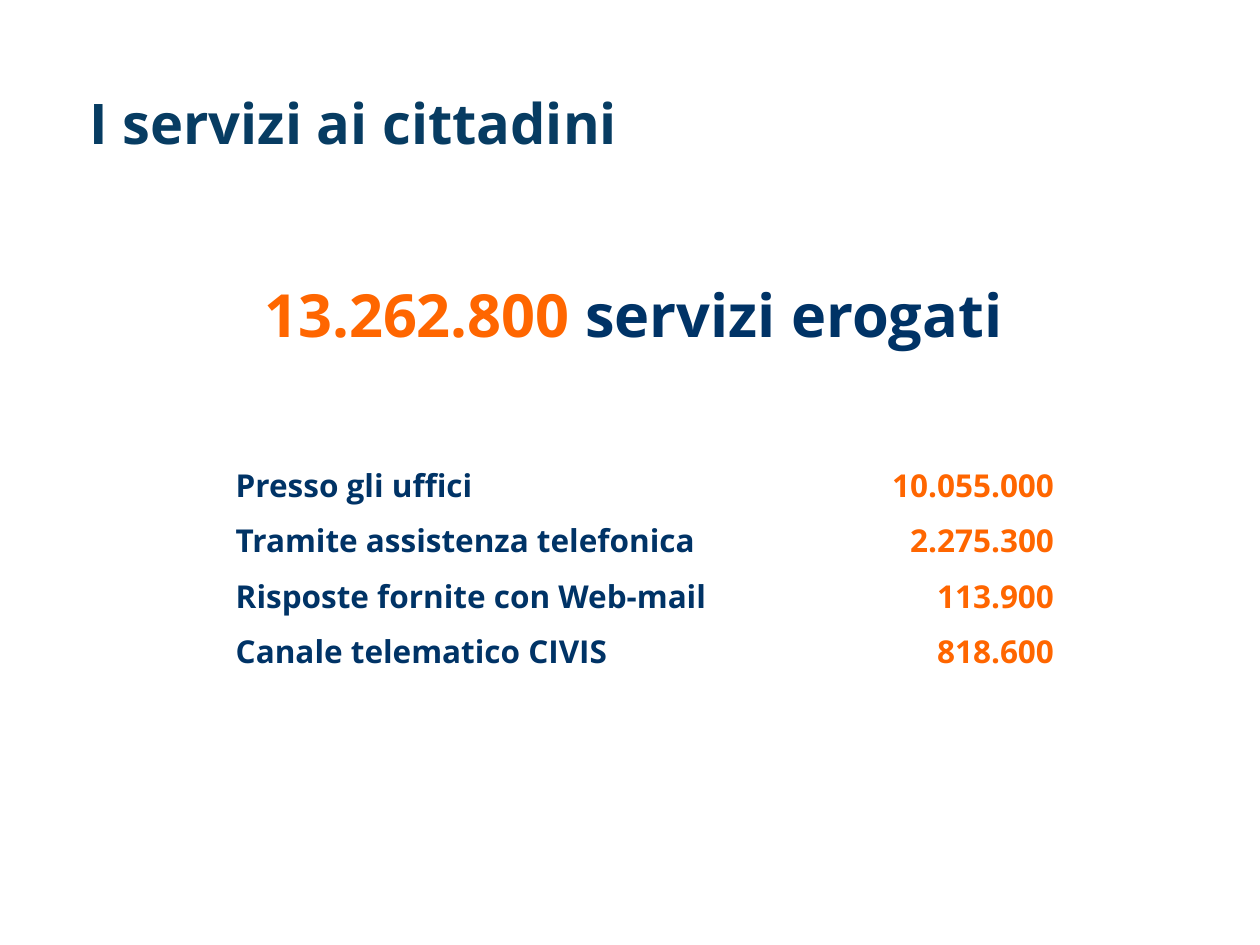
from pptx import Presentation
from pptx.dml.color import RGBColor
from pptx.enum import text
from pptx.util import Pt

FONT = "Open Sans"
NAVY, ORANGE, TITLE = "003366", "FF6600", "073C62"


def rgb(value):
    return RGBColor.from_string(value)


class Deck:
    def __init__(self, width, height):
        self.prs = Presentation()
        self.prs.slide_width, self.prs.slide_height = Pt(width), Pt(height)
        self.s = self.prs.slides.add_slide(self.prs.slide_layouts[5])

    def add_runs(self, tf, runs, size, align):
        p = tf.paragraphs[0]
        p.alignment = align
        for words, color in runs:
            r = p.add_run()
            r.text = words
            for name, value in {"name": FONT, "size": Pt(size), "bold": True}.items():
                setattr(r.font, name, value)
            r.font.color.rgb = rgb(color)

    def frame(self, sp, **settings):
        tf = sp.text_frame
        settings = {
            "word_wrap": True,
            "auto_size": text.MSO_AUTO_SIZE.NONE,
            "vertical_anchor": text.MSO_ANCHOR.TOP,
            **settings,
        }
        for name, value in settings.items():
            setattr(tf, name, value)
        return tf

    def title(self, words, left, top, width, height):
        sp = self.s.shapes.title
        box = {"left": left, "top": top, "width": width, "height": height}
        for name, value in box.items():
            setattr(sp, name, Pt(value))
        self.add_runs(self.frame(sp), [(words, TITLE)], 32, text.PP_ALIGN.LEFT)

    def headline(self, runs, *box):
        sp = self.s.shapes.add_textbox(*map(Pt, box))
        sides = ("left", "top", "right", "bottom")
        tf = self.frame(sp, **{f"margin_{side}": 0 for side in sides})
        self.add_runs(tf, runs, 34, text.PP_ALIGN.CENTER)

    def table(self, rows, left, top, widths, heights):
        box = map(Pt, (left, top, sum(widths), sum(heights)))
        table = self.s.shapes.add_table(len(heights), len(widths), *box).table
        table.first_row = table.horz_banding = False
        for column, width in zip(table.columns, widths):
            column.width = Pt(width)
        for row, height in zip(table.rows, heights):
            row.height = Pt(height)
        for cell in table.iter_cells():
            cell.fill.background()
        styles = [(NAVY, text.PP_ALIGN.LEFT), (ORANGE, text.PP_ALIGN.RIGHT)]
        for i, row in enumerate(rows, 1):
            for j, (words, (color, align)) in enumerate(zip(row, styles)):
                tf = table.cell(i, j).text_frame
                self.add_runs(tf, [(words, color)], 18, align)


def main():
    deck = Deck(720, 540)
    deck.title("I servizi ai cittadini", 44, 46.8, 637, 46)
    deck.headline(
        [("13.262.800 ", ORANGE), ("servizi erogati", NAVY)], 2, 159, 720, 80
    )
    services = [
        ("Presso gli uffici", "10.055.000"),
        ("Tramite assistenza telefonica", "2.275.300"),
        ("Risposte fornite con Web-mail", "113.900"),
        ("Canale telematico CIVIS", "818.600"),
    ]
    heights = [36.5] + [28.8] * len(services)
    deck.table(services, 127.5, 224.8, [351.5, 130.5], heights)
    deck.prs.save("out.pptx")


if __name__ == "__main__":
    main()
